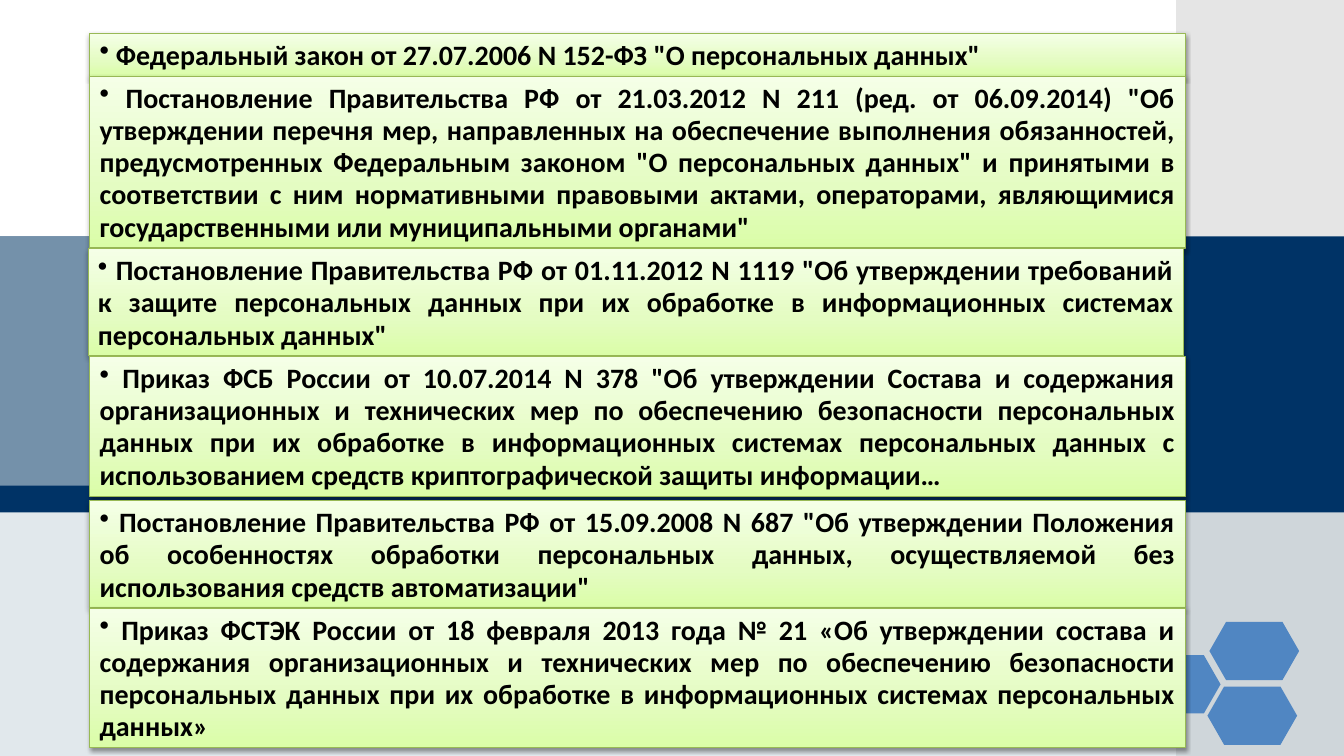
import copy

import pptx
import pptx.dml.color
import pptx.enum.shapes
import pptx.enum.text
import pptx.oxml
import pptx.oxml.ns
import pptx.util

Cm = pptx.util.Cm
Pt = pptx.util.Pt
RGBColor = pptx.dml.color.RGBColor
MSO_SHAPE = pptx.enum.shapes.MSO_SHAPE
qn = pptx.oxml.ns.qn

GREY = RGBColor(0xC0, 0xC0, 0xC0)
HAZE = RGBColor(0xA0, 0xB5, 0xC4)
NAVY = RGBColor(0x00, 0x33, 0x66)
BLUE = RGBColor(0x50, 0x86, 0xC2)
BLACK = RGBColor(0, 0, 0)
OLIVE = RGBColor(0x98, 0xB9, 0x55)
GRADIENT = [
    (0, RGBColor(0xDA, 0xFD, 0xA7)),
    (0.35, RGBColor(0xE4, 0xFC, 0xC2)),
    (1, RGBColor(0xF5, 0xFF, 0xE7)),
]

NS = 'xmlns:a="http://schemas.openxmlformats.org/drawingml/2006/main"'
SHADOW = (
    f'<a:outerShdw {NS} blurRad="39370" dist="20320" dir="5400000" rotWithShape="0">'
    '<a:srgbClr val="000000"><a:alpha val="38000"/></a:srgbClr></a:outerShdw>'
)
FONT = {"name": "Calibri", "size": Pt(20), "bold": True}
PARAGRAPH = {"alignment": pptx.enum.text.PP_ALIGN.JUSTIFY, "line_spacing": Pt(23)}
FRAME = {
    "word_wrap": True,
    "auto_size": pptx.enum.text.MSO_AUTO_SIZE.SHAPE_TO_FIT_TEXT,
    "vertical_anchor": pptx.enum.text.MSO_ANCHOR.MIDDLE,
}
LINE_HEIGHT = 0.81
PADDING = 0.27

LAWS = [
    (0, 0.84, 1, 'Федеральный закон от 27.07.2006 N 152-ФЗ "О персональных данных"'),
    (0, 1.93, 5, 'Постановление Правительства РФ от 21.03.2012 N 211 (ред. от 06.09.2014) '
     '"Об утверждении перечня мер, направленных на обеспечение выполнения обязанностей, '
     'предусмотренных Федеральным законом "О персональных данных" и принятыми в соответствии '
     'с ним нормативными правовыми актами, операторами, являющимися государственными или '
     'муниципальными органами"'),
    (-0.04, 6.27, 3, 'Постановление Правительства РФ от 01.11.2012 N 1119 "Об утверждении '
     'требований к защите персональных данных при их обработке в информационных системах '
     'персональных данных"'),
    (0, 8.99, 4, 'Приказ ФСБ России от 10.07.2014 N 378 "Об утверждении Состава и содержания '
     'организационных и технических мер по обеспечению безопасности персональных данных при '
     'их обработке в информационных системах персональных данных с использованием средств '
     'криптографической защиты информации…'),
    (0, 12.62, 3, 'Постановление Правительства РФ от 15.09.2008 N 687 "Об утверждении '
     'Положения об особенностях обработки персональных данных, осуществляемой без '
     'использования средств автоматизации"'),
    (0, 15.33, 4, 'Приказ ФСТЭК России от 18 февраля 2013 года № 21 «Об утверждении состава и '
     'содержания организационных и технических мер по обеспечению безопасности персональных '
     'данных при их обработке в информационных системах персональных данных»'),
]


def set_all(obj, values):
    for name, value in values.items():
        setattr(obj, name, value)


def paint(sp, color, alpha=100):
    sp.shadow.inherit = False
    sp.line.fill.background()
    sp.fill.solid()
    sp.fill.fore_color.rgb = color
    if alpha < 100:
        clr = sp._element.spPr.find(qn("a:solidFill"))[0]
        clr.append(pptx.oxml.parse_xml(f'<a:alpha {NS} val="{alpha * 1000}"/>'))


def add_shape(s, kind, x, y, w, h):
    return s.shapes.add_shape(kind, Cm(x), Cm(y), Cm(w), Cm(h))


def add_background(s, x, y, w, h):
    side, top, bottom = x + 29.64, y + 5.96, y + 12.88
    bands = [
        (side, y, x + w - side, h, GREY, 40),
        (x, bottom, w, y + h - bottom, HAZE, 31),
        (x, top, w, bottom - top + 0.03, NAVY, 100),
    ]
    for left, upper, width, height, color, alpha in bands:
        paint(add_shape(s, MSO_SHAPE.RECTANGLE, left, upper, width, height), color, alpha)
    fb = s.shapes.build_freeform(Cm(x - 0.03), Cm(top))
    fb.add_line_segments([
        (Cm(side), Cm(top)), (Cm(side), Cm(y + 12.2)), (Cm(x - 0.03), Cm(y + 12.24)),
    ])
    paint(fb.convert_to_shape(), HAZE, 73)


def add_hexagons(s, x, y, w, h):
    for dx, dy in [(0, 0.84), (1.98, 0), (1.93, 1.63)]:
        sp = add_shape(s, MSO_SHAPE.HEXAGON, x + dx, y + dy, w, h)
        sp.adjustments[0] = 0.286
        paint(sp, BLUE)


def add_law(s, x, y, w, h, text):
    sp = add_shape(s, MSO_SHAPE.ROUNDED_RECTANGLE, x, y, w, h)
    sp.adjustments[0] = 0
    sp.fill.gradient()
    sp.fill.gradient_angle = 90
    stops = sp._element.spPr.find(qn("a:gradFill")).find(qn("a:gsLst"))
    stops.append(copy.deepcopy(stops[0]))
    for stop, (position, color) in zip(sp.fill.gradient_stops, GRADIENT):
        stop.position = position
        stop.color.rgb = color
    sp.line.color.rgb = OLIVE
    sp.line.width = Pt(0.75)
    sp.shadow.inherit = False
    sp._element.spPr.find(qn("a:effectLst")).append(pptx.oxml.parse_xml(SHADOW))
    tf = sp.text_frame
    set_all(tf, FRAME)
    p = tf.paragraphs[0]
    set_all(p, PARAGRAPH)
    p._p.get_or_add_pPr().append(pptx.oxml.parse_xml(f'<a:buChar {NS} char="•"/>'))
    r = p.add_run()
    r.text = " " + text
    set_all(r.font, FONT)
    r.font.color.rgb = BLACK


def add_laws(s, x, w):
    for dx, y, lines, text in LAWS:
        add_law(s, x + dx, y, w, PADDING + LINE_HEIGHT * lines, text)


def main():
    prs = pptx.Presentation()
    prs.slide_width, prs.slide_height = Cm(33.87), Cm(19.05)
    s = prs.slides.add_slide(prs.slide_layouts[6])
    add_background(s, 0, 0, 33.87, 19.05)
    add_hexagons(s, 28.5, 15.67, 2.26, 1.47)
    add_laws(s, 2.26, 27.61)
    prs.save("out.pptx")


if __name__ == "__main__":
    main()
